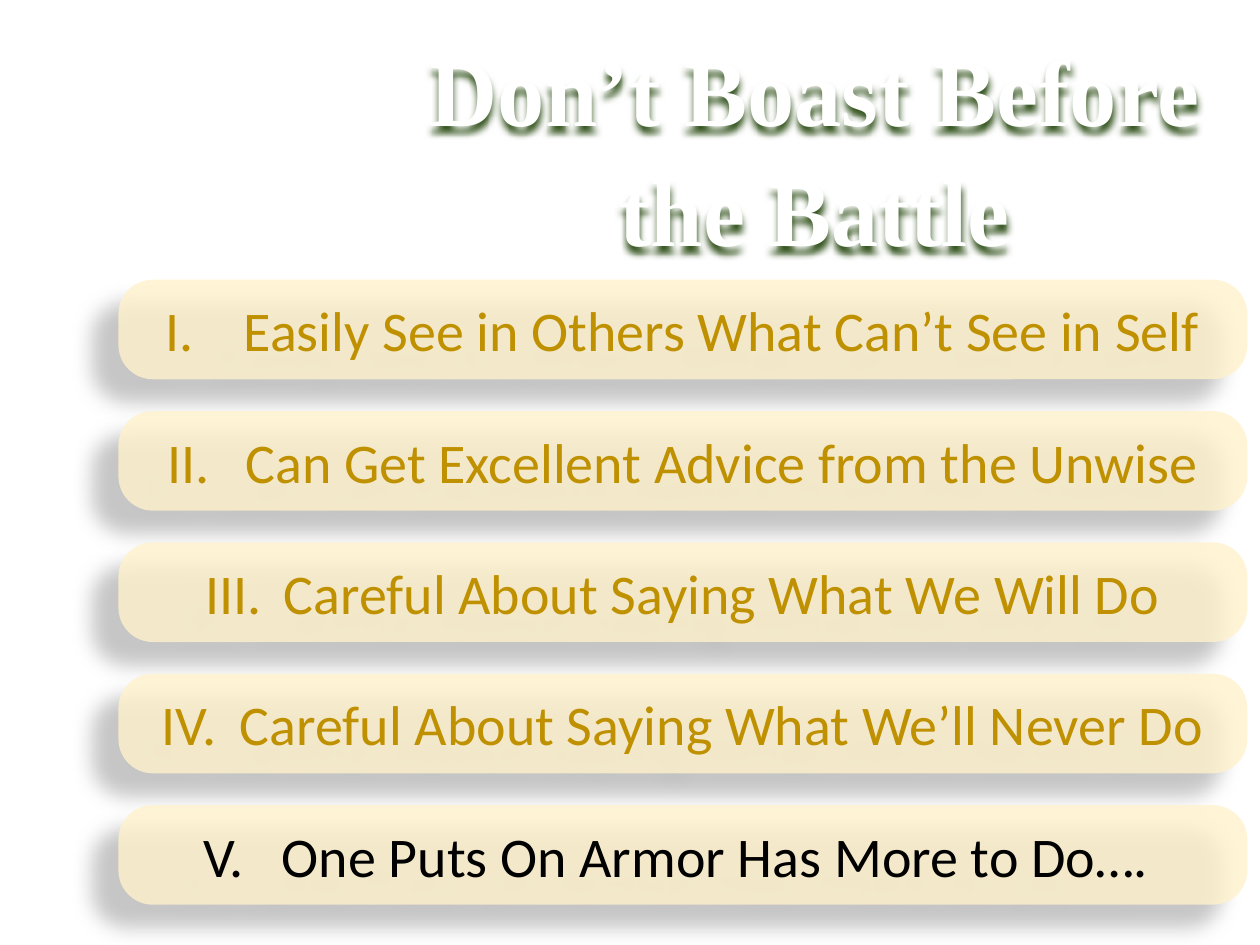
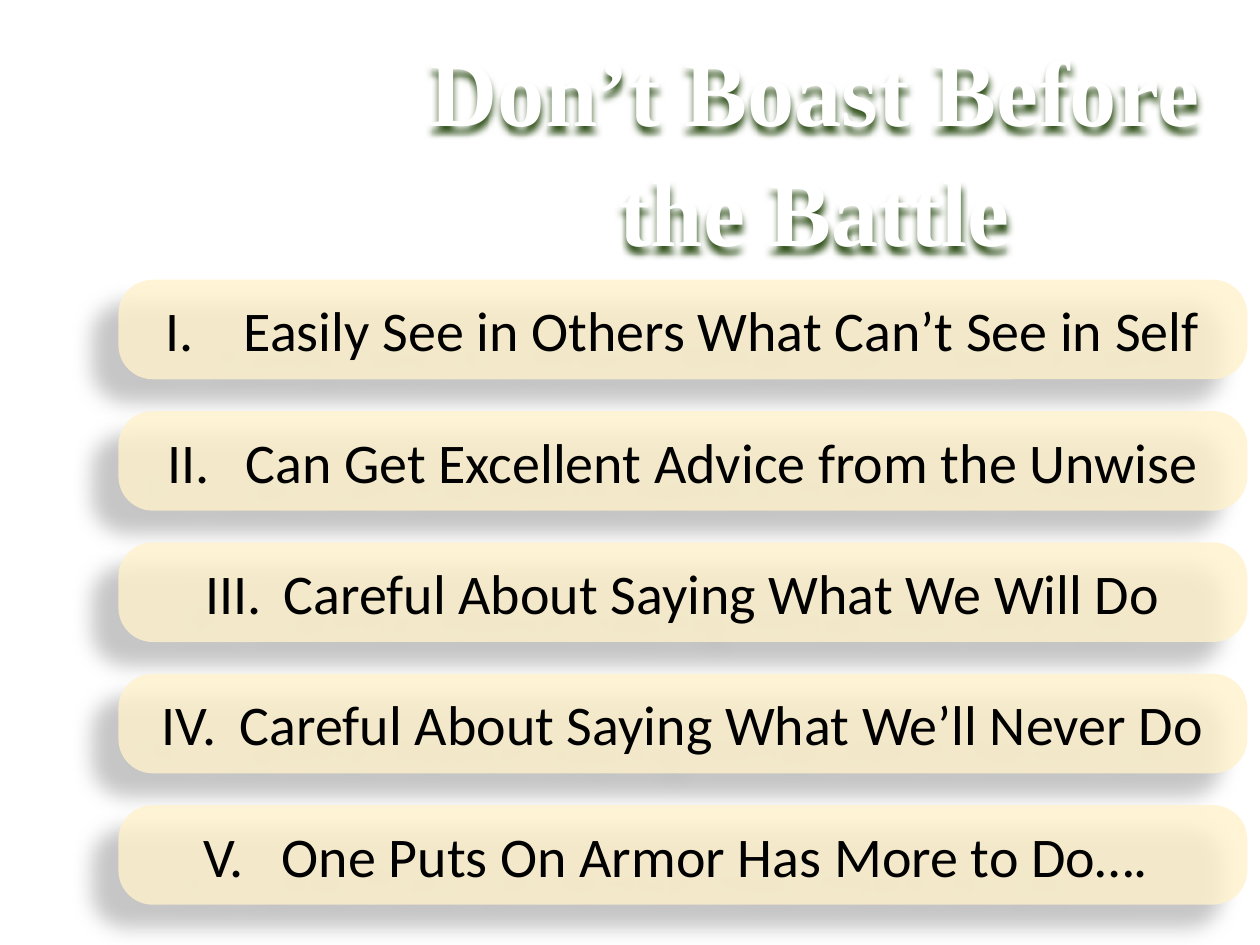
from dataclasses import dataclass

import pptx
import pptx.dml.color
import pptx.enum.shapes
import pptx.enum.text
import pptx.oxml
import pptx.oxml.ns
import pptx.util
from pptx.util import Inches

BAND_FILL = "FFF2CC"
MUTED = "BF9000"
ACTIVE = "000000"
WHITE = "FFFFFF"
TITLE = "Don’t Boast Before the Battle"
POINTS = (
    "Easily See in Others What Can’t See in Self",
    "Can Get Excellent Advice from the Unwise",
    "Careful About Saying What We Will Do",
    "Careful About Saying What We’ll Never Do",
    "One Puts On Armor Has More to Do…. ",
)
FIRST_TOP, LAST_TOP = 2.22, 6.39
PITCH = (LAST_TOP - FIRST_TOP) / (len(POINTS) - 1)
NUMBER_INDENT = Inches(0.62)
TITLE_BOX = {
    "left": Inches(3.03), "top": Inches(0.15),
    "width": Inches(6.87), "height": Inches(1.92),
}
TITLE_FONT = {"name": "Times New Roman", "size": pptx.util.Pt(54), "bold": True}
BAND_FONT = {"name": "Calibri", "size": pptx.util.Pt(32), "bold": False}
CENTER = pptx.enum.text.PP_ALIGN.CENTER


@dataclass(frozen=True)
class Shadow:
    color: str
    opacity: int
    blur: float
    distance: float
    angle: int


@dataclass(frozen=True)
class Band:
    number: int
    text: str
    color: str


BAND_SHADOW = Shadow("000000", 28, 11.8, 19.7, 141)
TITLE_SHADOW = Shadow("385723", 100, 4, 4, 90)


def rgb(value: str) -> pptx.dml.color.RGBColor:
    return pptx.dml.color.RGBColor.from_string(value)


def set_attributes(target, values: dict) -> None:
    for name, value in values.items():
        setattr(target, name, value)


def add_element(parent, tag: str, **attributes):
    element = pptx.oxml.ns.qn(tag)
    child = parent.makeelement(element, {key: str(value) for key, value in attributes.items()})
    parent.append(child)
    return child


def add_shadow(shape, shadow: Shadow) -> None:
    shape.shadow.inherit = False
    effects = shape.element.spPr.find(pptx.oxml.ns.qn("a:effectLst"))
    outer = add_element(
        effects, "a:outerShdw",
        blurRad=pptx.util.Pt(shadow.blur), dist=pptx.util.Pt(shadow.distance),
        dir=shadow.angle * 60000, algn="ctr", rotWithShape=0,
    )
    color = add_element(outer, "a:srgbClr", val=shadow.color)
    add_element(color, "a:alpha", val=shadow.opacity * 1000)


def format_font(paragraph, font: dict, color: str) -> None:
    for run in paragraph.runs:
        set_attributes(run.font, font)
        run.font.color.rgb = rgb(color)


def add_title(slide) -> None:
    title = slide.shapes.title
    set_attributes(title, TITLE_BOX)
    title.fill.background()
    title.line.fill.background()
    add_shadow(title, TITLE_SHADOW)
    frame = title.text_frame
    frame.text = TITLE
    set_attributes(frame, {
        "word_wrap": True,
        "vertical_anchor": pptx.enum.text.MSO_ANCHOR.TOP,
        "auto_size": pptx.enum.text.MSO_AUTO_SIZE.SHAPE_TO_FIT_TEXT,
    })
    paragraph = frame.paragraphs[0]
    set_attributes(paragraph, {"alignment": CENTER, "line_spacing": 1.06})
    format_font(paragraph, TITLE_FONT, WHITE)


def add_band(slide, band: Band) -> None:
    shape = slide.shapes.add_shape(
        pptx.enum.shapes.MSO_SHAPE.ROUNDED_RECTANGLE,
        Inches(0.94), Inches(FIRST_TOP + (band.number - 1) * PITCH),
        Inches(8.96), Inches(0.79),
    )
    shape.adjustments[0] = 0.345
    shape.fill.solid()
    shape.fill.fore_color.rgb = rgb(BAND_FILL)
    fill_color = shape.element.spPr.find(".//" + pptx.oxml.ns.qn("a:srgbClr"))
    add_element(fill_color, "a:alpha", val=80000)
    shape.line.fill.background()
    add_shadow(shape, BAND_SHADOW)
    frame = shape.text_frame
    frame.text = band.text
    set_attributes(frame, {
        "word_wrap": True,
        "vertical_anchor": pptx.enum.text.MSO_ANCHOR.MIDDLE,
    })
    paragraph = frame.paragraphs[0]
    paragraph.alignment = CENTER
    properties = paragraph._p.get_or_add_pPr()
    properties.set("marL", str(NUMBER_INDENT))
    properties.set("indent", str(-NUMBER_INDENT))
    add_element(properties, "a:buFont", typeface="+mj-lt")
    add_element(properties, "a:buAutoNum", type="romanUcPeriod", startAt=band.number)
    format_font(paragraph, BAND_FONT, band.color)


def add_outline_slide(presentation, muted_count: int) -> None:
    slide = presentation.slides.add_slide(presentation.slide_layouts.get_by_name("Title Only"))
    slide.background.fill.solid()
    slide.background.fill.fore_color.rgb = rgb(WHITE)
    add_title(slide)
    for number, text in enumerate(POINTS, start=1):
        add_band(slide, Band(number, text, MUTED if number <= muted_count else ACTIVE))


def main() -> None:
    presentation = pptx.Presentation()
    set_attributes(presentation, {"slide_width": Inches(10), "slide_height": Inches(7.5)})
    for muted_count in (len(POINTS) - 1, 0):
        add_outline_slide(presentation, muted_count)
    presentation.save("out.pptx")


if __name__ == "__main__":
    main()
